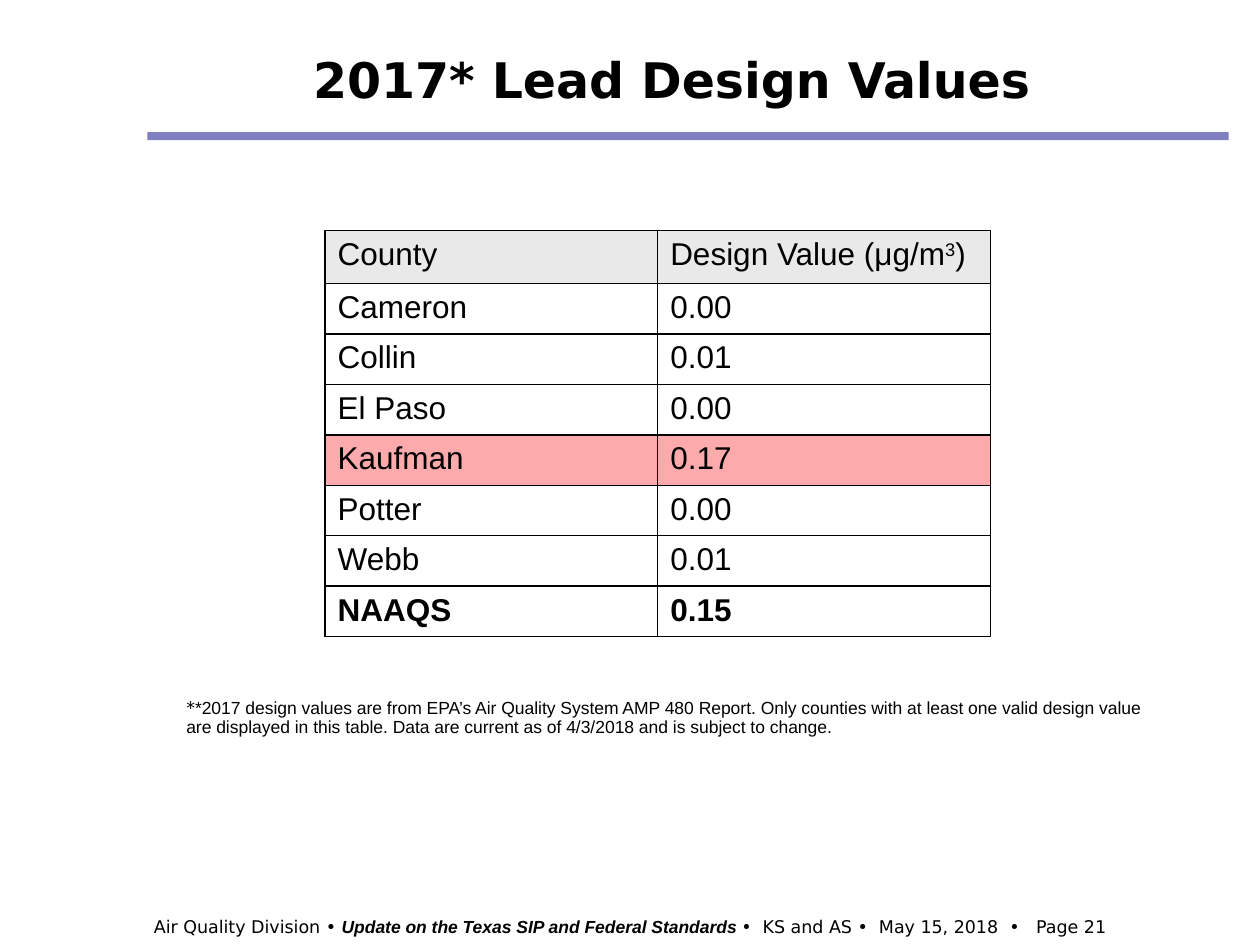
from lxml import etree
from pptx import Presentation
from pptx.dml.color import RGBColor
from pptx.enum.shapes import MSO_CONNECTOR, MSO_SHAPE
from pptx.enum.text import MSO_ANCHOR, PP_ALIGN
from pptx.oxml.ns import qn
from pptx.util import Inches, Pt

CENTER, LEFT = PP_ALIGN.CENTER, PP_ALIGN.LEFT
TOP, MIDDLE = MSO_ANCHOR.TOP, MSO_ANCHOR.MIDDLE
STRAIGHT, RECTANGLE = MSO_CONNECTOR.STRAIGHT, MSO_SHAPE.RECTANGLE
TITLE_ONLY = 5
SANS, ARIAL = "DejaVu Sans", "Arial"
BLACK, WHITE, GRAY, PINK, NAVY = "000000", "FFFFFF", "E9E9E9", "FDAAAC", "000086"

VALUES = [
    ("Cameron", "0.00"),
    ("Collin", "0.01"),
    ("El Paso", "0.00"),
    ("Kaufman", "0.17"),
    ("Potter", "0.00"),
    ("Webb", "0.01"),
    ("NAAQS", "0.15"),
]


def rgb(color):
    return RGBColor.from_string(color)


def inches(*lengths):
    return [Inches(length) for length in lengths]


def add_span(para, text, size=10, font=ARIAL, bold=False, italic=False, raised=False):
    span = para.add_run()
    span.text = text
    span.font.size = Pt(size)
    span.font.name = font
    span.font.bold = bold
    span.font.italic = italic
    span.font.color.rgb = rgb(BLACK)
    if raised:
        span.font._element.set("baseline", "30000")


def set_frame(frame, anchor=TOP, align=LEFT):
    frame.word_wrap = True
    frame.vertical_anchor = anchor
    para = frame.paragraphs[0]
    para.alignment = align
    return para


def add_title(page, text):
    title = page.shapes.title
    title.left, title.top, title.width, title.height = inches(1.58, 0.17, 7.5, 0.92)
    para = set_frame(title.text_frame, MIDDLE, CENTER)
    add_span(para, text, size=28, font=SANS, bold=True)


def add_rule(page):
    rule = page.shapes.add_connector(STRAIGHT, *inches(1.17, 1.08, 9.75, 1.08))
    rule.line.color.rgb = rgb(NAVY)
    rule.line.width = Pt(4.5)
    # Half-transparent line, no shadow
    color = rule._element.spPr.find(".//" + qn("a:srgbClr"))
    etree.SubElement(color, qn("a:alpha"), val="50000")
    etree.SubElement(rule._element.spPr, qn("a:effectLst"))


def set_borders(cell):
    properties = cell._tc.get_or_add_tcPr()
    for index, side in enumerate(("lnL", "lnR", "lnT", "lnB")):
        line = etree.Element(qn("a:" + side), w=str(Pt(1)))
        fill = etree.SubElement(line, qn("a:solidFill"))
        etree.SubElement(fill, qn("a:srgbClr"), val=BLACK)
        properties.insert(index, line)


def fill_cell(cell, text, color=WHITE, bold=False):
    cell.fill.solid()
    cell.fill.fore_color.rgb = rgb(color)
    set_borders(cell)
    para = cell.text_frame.paragraphs[0]
    add_span(para, text, size=18, bold=bold)
    return para


def add_values(page):
    frame = page.shapes.add_table(len(VALUES) + 1, 2, *inches(2.58, 1.83, 5.28, 3.08))
    table = frame.table
    for row in table.rows:
        row.height = Inches(0.38)
    table.rows[0].height = Inches(0.42)

    # Header row
    fill_cell(table.cell(0, 0), "County", GRAY)
    para = fill_cell(table.cell(0, 1), "Design Value (μg/m", GRAY)
    add_span(para, "3", size=18, raised=True)
    add_span(para, ")", size=18)

    # County rows, with the standard in bold at the end
    for row, record in enumerate(VALUES, 1):
        color = PINK if record[0] == "Kaufman" else WHITE
        for column, text in enumerate(record):
            fill_cell(table.cell(row, column), text, color, bold=record[0] == "NAAQS")


def add_footnote(page):
    box = page.shapes.add_shape(RECTANGLE, *inches(1.38, 5.5, 7.92, 0.4))
    box.shadow.inherit = False
    box.fill.solid()
    box.fill.fore_color.rgb = rgb(WHITE)
    box.line.fill.background()
    para = set_frame(box.text_frame)
    para.line_spacing = 0.9
    add_span(para, "*", font=SANS)
    add_span(para, "*2017 design values are from EPA’s Air Quality System AMP 480 Report. "
                   "Only counties with at least one valid design value are displayed in "
                   "this table. Data are current as of 4/3/2018 and is subject to change.")


def add_footer(page):
    box = page.shapes.add_textbox(*inches(0, 7.22, 10, 0.27))
    para = set_frame(box.text_frame, align=CENTER)
    add_span(para, "Air Quality Division • ", font=SANS)
    add_span(para, "Update on the Texas SIP and Federal Standards ", bold=True, italic=True)
    add_span(para, "•  KS and AS •  May 15, 2018  •   Page 21", font=SANS)


def main():
    deck = Presentation()
    deck.slide_width, deck.slide_height = inches(10, 7.5)
    page = deck.slides.add_slide(deck.slide_layouts[TITLE_ONLY])
    add_rule(page)
    add_footer(page)
    add_title(page, "2017* Lead Design Values")
    add_values(page)
    add_footnote(page)
    deck.save("out.pptx")


if __name__ == "__main__":
    main()
